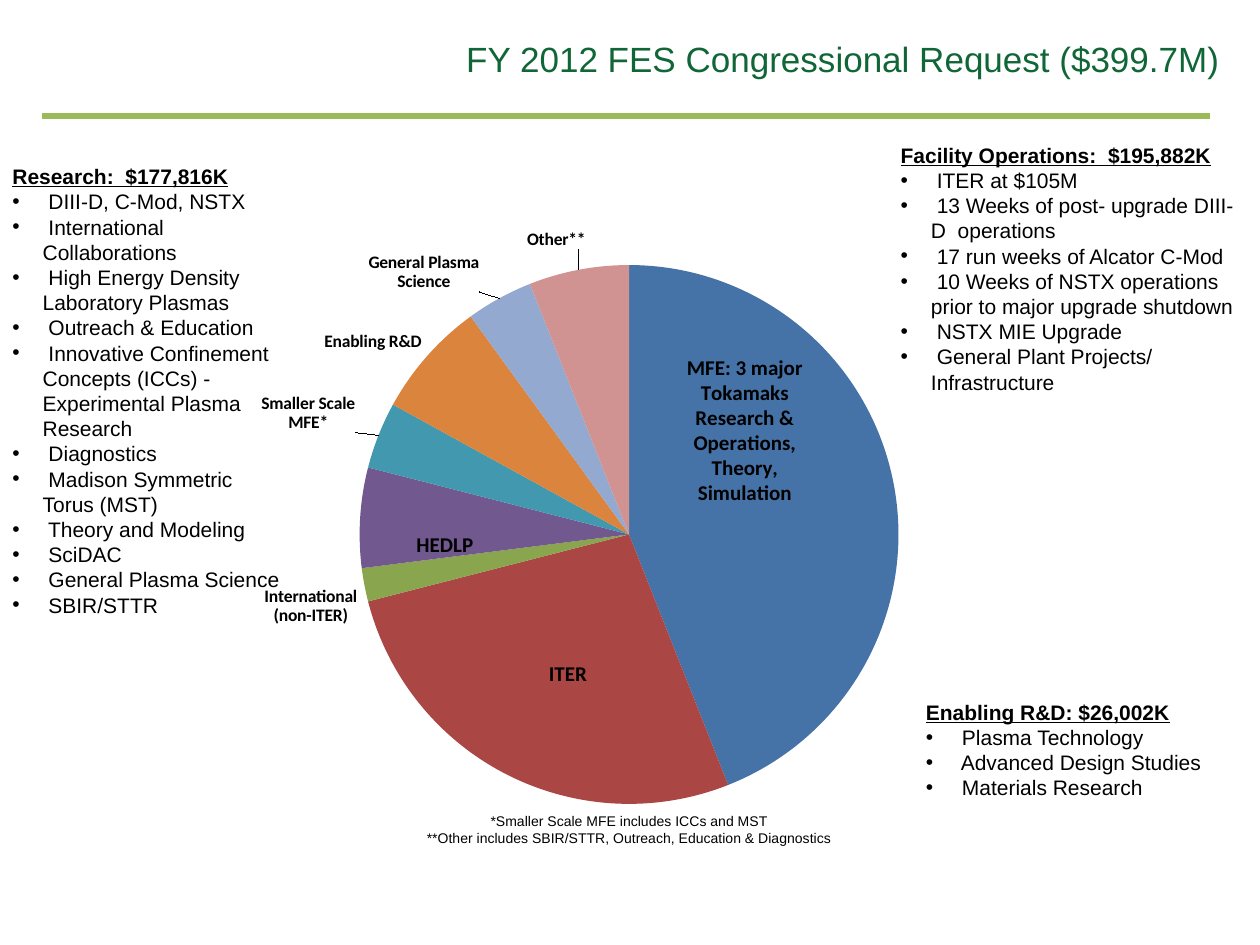
from lxml.etree import SubElement
from pptx import Presentation
from pptx.chart.data import CategoryChartData
from pptx.dml.color import RGBColor
from pptx.enum.chart import XL_CHART_TYPE, XL_LABEL_POSITION
from pptx.enum.shapes import MSO_CONNECTOR
from pptx.enum.text import MSO_ANCHOR, MSO_AUTO_SIZE, PP_ALIGN
from pptx.oxml import parse_xml
from pptx.oxml.ns import nsdecls, qn
from pptx.util import Inches, Pt

SLIDE_WIDTH, SLIDE_HEIGHT = Inches(10), Inches(7.5)
COLUMN, ROW = SLIDE_WIDTH // 100, SLIDE_HEIGHT // 75

BLACK = RGBColor(0x00, 0x00, 0x00)
TITLE_GREEN = RGBColor(0x10, 0x66, 0x36)
RULE_GREEN = RGBColor(0x9B, 0xBB, 0x59)
SLICE_COLOURS = [
    RGBColor(0x45, 0x72, 0xA7), RGBColor(0xAA, 0x46, 0x43),
    RGBColor(0x89, 0xA5, 0x4E), RGBColor(0x71, 0x58, 0x8F),
    RGBColor(0x41, 0x98, 0xAF), RGBColor(0xDB, 0x84, 0x3D),
    RGBColor(0x93, 0xA9, 0xCF), RGBColor(0xD1, 0x93, 0x92),
]

BUDGET_SHARES = {
    "MFE: 3 major Tokamaks Research & Operations": 44,
    "ITER": 27,
    "International (non-ITER)": 2,
    "HEDLP": 6,
    "Smaller Scale MFE": 4,
    "Enabling R&D": 7,
    "General Plasma Science": 4,
    "Other": 6,
}
INSIDE, OUTSIDE = XL_LABEL_POSITION.CENTER, XL_LABEL_POSITION.OUTSIDE_END
SLICE_LABELS = {
    0: ("MFE: 3 major\nTokamaks\nResearch &\nOperations,\nTheory,\nSimulation", INSIDE, 12, (-0.02, -0.12)),
    1: ("ITER", INSIDE, 12, (0, 0.03)),
    2: ("International\n(non-ITER)", OUTSIDE, 10, None),
    3: ("HEDLP", INSIDE, 12, (-0.06, 0.03)),
    4: ("Smaller Scale MFE*", OUTSIDE, 10, (-0.02, 0)),
    6: ("General Plasma\nScience", OUTSIDE, 10, (-0.02, 0)),
    7: ("Other**", OUTSIDE, 10, (0.01, -0.02)),
}

BUDGET_LISTS = [
    ((0, 12.5, 24.2, 35.3), "Research:  $177,816K", [
        "DIII-D, C-Mod, NSTX", "International Collaborations",
        "High Energy Density Laboratory Plasmas", "Outreach & Education",
        "Innovative Confinement Concepts (ICCs) - Experimental Plasma Research",
        "Diagnostics", "Madison Symmetric\vTorus (MST)", "Theory and Modeling",
        "SciDAC", "General Plasma Science", "SBIR/STTR"]),
    ((70.5, 10.8, 29.5, 21.2), "Facility Operations:  $195,882K", [
        "ITER at $105M", "13 Weeks of post- upgrade DIII-D  operations",
        "17 run weeks of Alcator C-Mod",
        "10 Weeks of NSTX operations prior to major upgrade shutdown",
        "NSTX MIE Upgrade", "General Plant Projects/ Infrastructure"]),
    ((72.5, 55, 29.2, 9.1), "Enabling R&D: $26,002K", [
        "Plasma Technology", "Advanced Design Studies", "Materials Research"]),
]
FOOTNOTES = ["*Smaller Scale MFE includes ICCs and MST",
             "**Other includes SBIR/STTR, Outreach, Education & Diagnostics"]


def cells(left, top, width, height):
    """Turn a box in grid columns and rows into slide lengths."""
    return (round(left * COLUMN), round(top * ROW),
            round(width * COLUMN), round(height * ROW))


def write(paragraph, text, size=12, font="Arial", colour=BLACK, bold=False,
          underline=False, align=PP_ALIGN.LEFT, bullet=False, leading=1.2):
    """Put formatted text in a paragraph, with an optional hanging bullet."""
    paragraph.text = text
    paragraph.alignment = align
    if leading:
        paragraph.line_spacing = Pt(size * leading)
    if bullet:
        properties = paragraph._p.get_or_add_pPr()
        properties.set("marL", str(Inches(0.24)))
        properties.set("indent", str(-Inches(0.24)))
        SubElement(properties, qn("a:buFont")).set("typeface", "Arial")
        SubElement(properties, qn("a:buChar")).set("char", "•")
    for run in paragraph.runs:
        run.font.name, run.font.size = font, Pt(size)
        run.font.bold, run.font.underline = bold, underline
        run.font.color.rgb = colour


def manual_layout(**values):
    """Build a chart layout element from its named values."""
    parts = "".join(f'<c:{name} val="{value}"/>' for name, value in values.items())
    return parse_xml(f'<c:layout {nsdecls("c")}><c:manualLayout>{parts}'
                     "</c:manualLayout></c:layout>")


def add_text_frame(slide, box):
    """Add a wrapping text box and return its frame."""
    frame = slide.shapes.add_textbox(*cells(*box)).text_frame
    frame.word_wrap = True
    return frame


def add_heading(slide, box, rule_box):
    """Place the slide title and the green rule below it."""
    title = slide.shapes.title
    title.left, title.top, title.width, title.height = cells(*box)
    frame = title.text_frame
    frame.auto_size = MSO_AUTO_SIZE.NONE
    frame.vertical_anchor = MSO_ANCHOR.TOP
    write(frame.paragraphs[0], "FY 2012 FES Congressional Request ($399.7M)",
          size=20, colour=TITLE_GREEN, leading=None)
    left, top, width, height = cells(*rule_box)
    rule = slide.shapes.add_connector(MSO_CONNECTOR.STRAIGHT, left, top,
                                      left + width, top + height)
    rule.line.color.rgb = RULE_GREEN
    rule.line.width = Pt(3)
    SubElement(rule._element.spPr, qn("a:effectLst"))


def add_budget_pie(slide, box):
    """Place the pie of budget shares with its slice labels."""
    data = CategoryChartData()
    data.categories = list(BUDGET_SHARES)
    data.add_series("Series 1", list(BUDGET_SHARES.values()))
    chart = slide.shapes.add_chart(XL_CHART_TYPE.PIE, *cells(*box), data).chart
    chart.has_legend = chart.has_title = False
    chart.font.name, chart.font.size = "Calibri", Pt(10)
    chart.font.color.rgb = BLACK
    plot_area = chart._chartSpace.chart.plotArea
    for layout in plot_area.findall(qn("c:layout")):
        plot_area.remove(layout)
    plot_area.insert(0, manual_layout(layoutTarget="inner", xMode="edge", yMode="edge",
                                      x=0.18, y=0.1, w=0.65, h=0.83))
    plot = chart.plots[0]
    plot.vary_by_categories = True
    shares = plot.series[0]
    for index, colour in enumerate(SLICE_COLOURS):
        fill = shares.points[index].format.fill
        fill.solid()
        fill.fore_color.rgb = colour
    labels = shares.data_labels
    labels.show_category_name, labels.show_value = True, False
    labels.position = OUTSIDE
    labels.font.bold, labels.font.size = True, Pt(10)
    labels.font.name, labels.font.color.rgb = "Calibri", BLACK
    for index, (text, position, size, shift) in SLICE_LABELS.items():
        label = shares.points[index].data_label
        frame = label.text_frame
        frame.text = text
        for paragraph in frame.paragraphs:
            write(paragraph, paragraph.text, size=size, font="Calibri", bold=True,
                  align=PP_ALIGN.CENTER, leading=None)
        label.position = position
        if shift:
            element = label._dLbl
            element.insert(1, manual_layout(x=shift[0], y=shift[1]))


def add_budget_list(slide, box, heading, items):
    """Place one underlined heading with its bulleted items."""
    frame = add_text_frame(slide, box)
    write(frame.paragraphs[0], heading, bold=True, underline=True)
    for item in items:
        write(frame.add_paragraph(), f" {item}", bullet=True)


def add_footnotes(slide, box):
    """Place the centred notes under the pie."""
    frame = add_text_frame(slide, box)
    write(frame.paragraphs[0], FOOTNOTES[0], size=8, align=PP_ALIGN.CENTER)
    for note in FOOTNOTES[1:]:
        write(frame.add_paragraph(), note, size=8, align=PP_ALIGN.CENTER)


def main():
    """Build the budget request slide and save it."""
    presentation = Presentation()
    presentation.slide_width, presentation.slide_height = SLIDE_WIDTH, SLIDE_HEIGHT
    slide = presentation.slides.add_slide(presentation.slide_layouts[5])
    add_heading(slide, (36, 2.5, 65.8, 8), (3.3, 9.2, 92.7, 0))
    add_budget_pie(slide, (16.7, 15.8, 65.8, 51.7))
    for box, heading, items in BUDGET_LISTS:
        add_budget_list(slide, box, heading, items)
    add_footnotes(slide, (19.1, 64, 61.7, 3.7))
    presentation.save("out.pptx")


if __name__ == "__main__":
    main()
